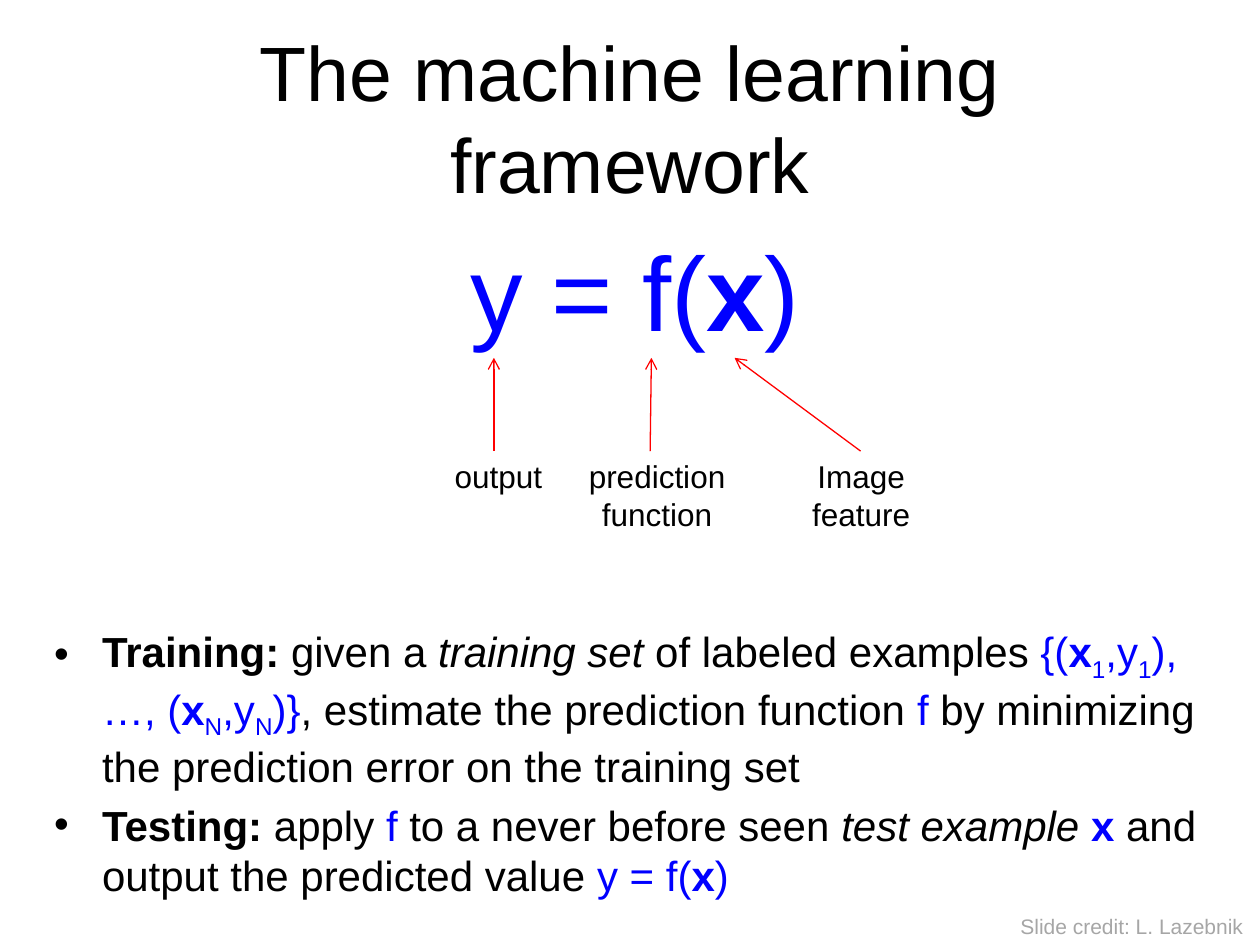
from lxml import etree
from pptx import Presentation
from pptx.dml.color import RGBColor
from pptx.enum.shapes import MSO_CONNECTOR
from pptx.enum.text import MSO_ANCHOR, MSO_AUTO_SIZE, PP_ALIGN
from pptx.oxml.ns import qn
from pptx.util import Inches, Pt

CENTER, LEFT = PP_ALIGN.CENTER, PP_ALIGN.LEFT
MIDDLE, TOP = MSO_ANCHOR.MIDDLE, MSO_ANCHOR.TOP
NO_FIT, GROW = MSO_AUTO_SIZE.NONE, MSO_AUTO_SIZE.SHAPE_TO_FIT_TEXT
STRAIGHT = MSO_CONNECTOR.STRAIGHT
BLACK, BLUE, RED, GRAY = "000000", "0000FF", "FF0000", "A6A6A6"

B = {"bold": True}
I = {"italic": True}
MATH = {"color": BLUE}
VEC = {"color": BLUE, "bold": True}
SUB = {"color": BLUE, "base": -25}

FORMULA = [("y = f(", MATH), ("x", VEC), (")", MATH)]
TRAINING = [
    ("Training: ", B), ("given a ", {}), ("training set ", I),
    ("of labeled examples ", {}), ("{(", MATH), ("x", VEC), ("1", SUB),
    (",y", MATH), ("1", SUB), ("), …, (", MATH), ("x", VEC), ("N", SUB),
    (",y", MATH), ("N", SUB), (")}", MATH),
    (", estimate the prediction function ", {}), ("f ", MATH),
    ("by minimizing the prediction error on the training set", {}),
]
TESTING = [
    ("Testing:", B), (" apply ", {}), ("f", MATH),
    (" to a never before seen ", {}), ("test example ", I), ("x", VEC),
    (" and output the predicted value ", {}), *FORMULA,
]


def rgb(value):
    """Return the colour for a hex string."""
    return RGBColor.from_string(value)


def add_text(p, text, size=24, color=BLACK, bold=False, italic=False, base=0):
    """Add one formatted run to a paragraph."""
    r = p.add_run()
    r.text = text
    r.font.name, r.font.size = "Arial", Pt(size)
    r.font.bold, r.font.italic = bold, italic
    r.font.color.rgb = rgb(color)
    if base:
        r.font._element.set("baseline", str(base * 1000))


def place(sp, box):
    """Move a shape to a box given in inches."""
    sp.left, sp.top, sp.width, sp.height = map(Inches, box)


def set_bullet(p, char=None):
    """Set the hanging indent, and a bullet where a character is given."""
    pPr = p._p.get_or_add_pPr()
    pPr.set("marL", str(Inches(0.38)))
    pPr.set("indent", str(-Inches(0.38)))
    if char:
        etree.SubElement(pPr, qn("a:buFont"), typeface="Arial")
        etree.SubElement(pPr, qn("a:buChar"), char=char)
    else:
        etree.SubElement(pPr, qn("a:buNone"))


def add_title(s, box, text):
    """Fill the title placeholder."""
    sp = s.shapes.title
    place(sp, box)
    tf = sp.text_frame
    tf.auto_size, tf.vertical_anchor = NO_FIT, MIDDLE
    p = tf.paragraphs[0]
    p.alignment = CENTER
    add_text(p, text, size=44)


def add_body(s, box):
    """Fill the body placeholder with the formula and the two steps."""
    sp = s.placeholders[1]
    place(sp, box)
    tf = sp.text_frame
    tf.auto_size, tf.vertical_anchor = NO_FIT, TOP
    rows = [
        (FORMULA, 60, CENTER, None, 0),
        (TRAINING, 24, LEFT, "•", 156),
        (TESTING, 24, LEFT, "•", 4.8),
    ]
    for i, (runs, size, align, char, before) in enumerate(rows):
        p = tf.add_paragraph() if i else tf.paragraphs[0]
        set_bullet(p, char)
        p.alignment, p.space_before = align, Pt(before)
        for text, fmt in runs:
            add_text(p, text, size=size, **fmt)


def add_label(s, box, text, size=18, color=BLACK, align=CENTER, wrap=True):
    """Add a text box that grows with its text."""
    sp = s.shapes.add_textbox(*map(Inches, box))
    tf = sp.text_frame
    tf.word_wrap, tf.auto_size = wrap, GROW
    p = tf.paragraphs[0]
    p.alignment = align
    add_text(p, text, size=size, color=color)


def add_arrow(s, start, end):
    """Add a thin red arrow between two points."""
    c = s.shapes.add_connector(STRAIGHT, *map(Inches, start + end))
    c.line.color.rgb = rgb(RED)
    c.line.width = Pt(0.75)
    etree.SubElement(c.line._get_or_add_ln(), qn("a:tailEnd"), type="arrow")
    etree.SubElement(c._element.spPr, qn("a:effectLst"))


def add_callouts(s, top, tip):
    """Label the parts of the formula, with an arrow up to each."""
    callouts = [
        ("output", 3.51, 0.9, 0.4, 3.92, 3.92, LEFT, False),
        ("prediction function", 4.18, 2.07, 0.71, 5.16, 5.17, CENTER, True),
        ("Image feature", 6.01, 1.65, 0.71, 6.83, 5.83, CENTER, True),
    ]
    for text, x, w, h, x1, x2, align, wrap in callouts:
        add_arrow(s, (x1, top), (x2, tip))
        add_label(s, (x, top, w, h), text, align=align, wrap=wrap)


def main():
    """Build the slide and save it."""
    prs = Presentation()
    prs.slide_width, prs.slide_height = Inches(10), Inches(7.5)
    s = prs.slides.add_slide(prs.slide_layouts[1])
    add_title(s, (0.5, 0.3, 9, 1.25), "The machine learning framework")
    add_body(s, (0.33, 1.75, 9.42, 4.95))
    add_callouts(s, 3.58, 2.84)
    add_label(s, (8, 7.2, 1.98, 0.3), "Slide credit: L. Lazebnik",
              size=12, color=GRAY, align=LEFT, wrap=False)
    prs.save("out.pptx")


if __name__ == "__main__":
    main()
